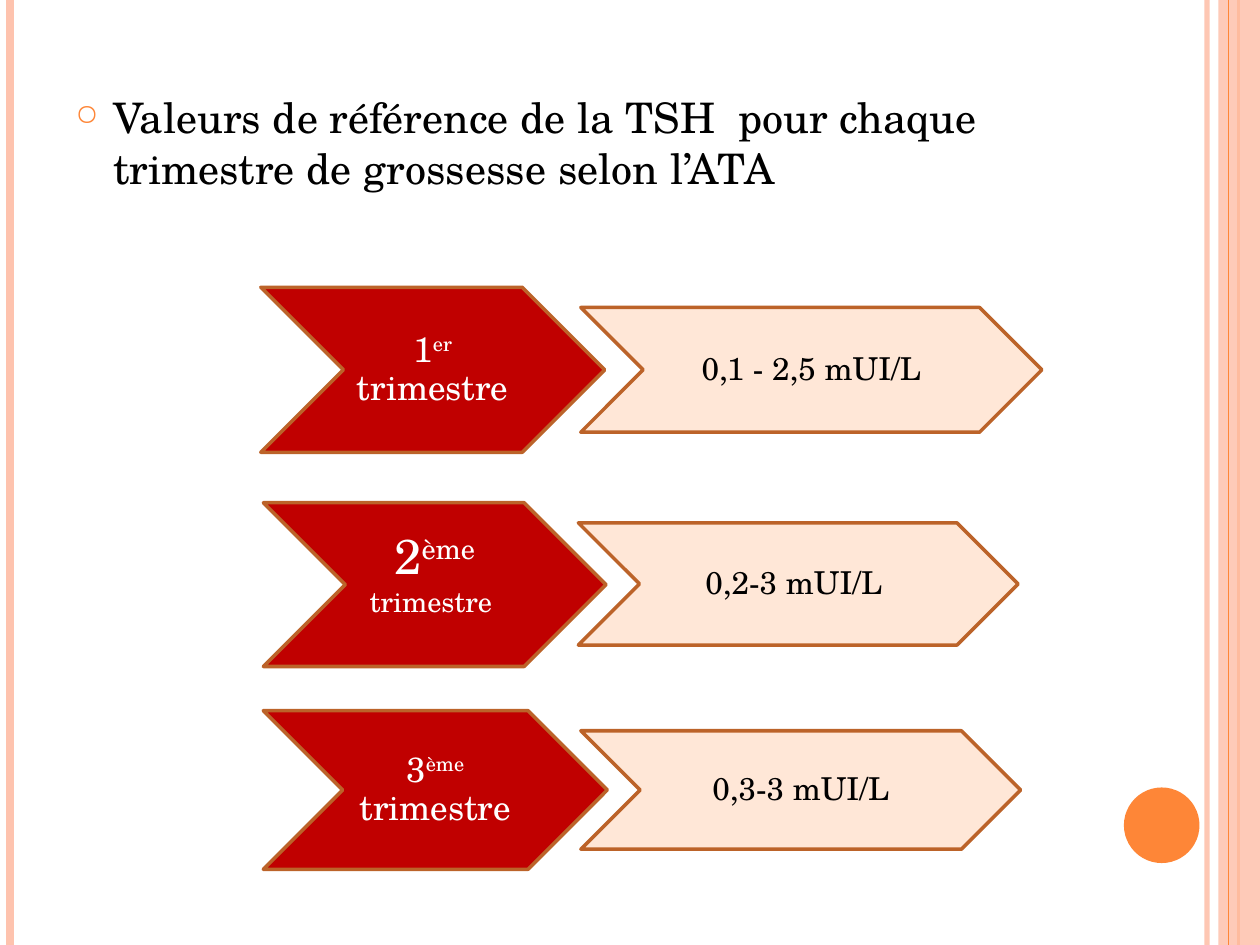
from pptx import Presentation
from pptx.dml.color import RGBColor
from pptx.enum.shapes import MSO_CONNECTOR, MSO_SHAPE
from pptx.enum.text import MSO_ANCHOR, PP_ALIGN
from pptx.oxml.ns import qn
from pptx.util import Inches, Pt
from lxml import etree

STRAIGHT = MSO_CONNECTOR.STRAIGHT
RECTANGLE, OVAL, CHEVRON = MSO_SHAPE.RECTANGLE, MSO_SHAPE.OVAL, MSO_SHAPE.CHEVRON
CENTER, MIDDLE = PP_ALIGN.CENTER, MSO_ANCHOR.MIDDLE

PINK = RGBColor(0xFE, 0xC3, 0xAE)
ORANGE = RGBColor(0xFE, 0x86, 0x37)
BROWN = RGBColor(0xBC, 0x63, 0x29)
RED = RGBColor(0xC0, 0x00, 0x00)
CREAM = RGBColor(0xFF, 0xE7, 0xD7)
WHITE = RGBColor(0xFF, 0xFF, 0xFF)
BLACK = RGBColor(0x00, 0x00, 0x00)

COLUMNS, ROWS = 100, 75


class SlideBuilder:
    """Draws on one slide, with lengths in columns and rows of the grid."""

    font_name = "TeX Gyre Schola"

    def __init__(self, presentation):
        self.slide = presentation.slides.add_slide(presentation.slide_layouts[6])
        self.column = presentation.slide_width / COLUMNS
        self.row = presentation.slide_height / ROWS

    def place(self, left, top, width, height):
        return (round(left * self.column), round(top * self.row),
                round(width * self.column), round(height * self.row))

    def set_alpha(self, element, percent):
        color = next(element.iter(qn("a:srgbClr")))
        etree.SubElement(color, qn("a:alpha")).set("val", str(percent * 1000))

    def vertical_line(self, column, color, width, alpha=100):
        x, top, _, bottom = self.place(column, 0, 0, ROWS)
        line = self.slide.shapes.add_connector(STRAIGHT, x, top, x, bottom)
        line.line.color.rgb = color
        line.line.width = Pt(width)
        properties = line._element.spPr
        if alpha < 100:
            self.set_alpha(properties, alpha)
        etree.SubElement(properties, qn("a:effectLst"))

    def shape(self, kind, box, fill, outline=None, alpha=100):
        shape = self.slide.shapes.add_shape(kind, *self.place(*box))
        shape.shadow.inherit = False
        shape.fill.solid()
        shape.fill.fore_color.rgb = fill
        if alpha < 100:
            self.set_alpha(shape._element.spPr, alpha)
        if outline is None:
            shape.line.fill.background()
        else:
            shape.line.color.rgb = outline
            shape.line.width = Pt(2)
        return shape

    def add_run(self, paragraph, text, size, color, superscript=False):
        run = paragraph.add_run()
        run.text = text
        run.font.color.rgb = color
        for name, value in {"name": self.font_name, "size": Pt(size)}.items():
            setattr(run.font, name, value)
        if superscript:
            run.font._element.set("baseline", "30000")

    def chevron(self, box, fill, color, size, parts):
        """Every second text of parts is set as superscript."""
        frame = self.shape(CHEVRON, box, fill, BROWN).text_frame
        margins = dict.fromkeys(
            ("margin_left", "margin_right", "margin_top", "margin_bottom"), Inches(0.02))
        for name, value in {"word_wrap": True, "vertical_anchor": MIDDLE, **margins}.items():
            setattr(frame, name, value)
        paragraph = frame.paragraphs[0]
        paragraph.alignment = CENTER
        paragraph.line_spacing = 0.9
        for index, text in enumerate(parts):
            self.add_run(paragraph, text, size, color, superscript=index % 2 == 1)

    def bullet_text(self, box, text, size):
        frame = self.slide.shapes.add_textbox(*self.place(*box)).text_frame
        frame.word_wrap = True
        paragraph = frame.paragraphs[0]
        paragraph.space_before = Pt(6)
        properties = paragraph._p.get_or_add_pPr()
        indent = Inches(0.3)
        properties.set("marL", str(indent))
        properties.set("indent", str(-indent))
        bullet_color = etree.SubElement(properties, qn("a:buClr"))
        etree.SubElement(bullet_color, qn("a:srgbClr")).set("val", str(ORANGE))
        etree.SubElement(properties, qn("a:buSzPct")).set("val", "70000")
        etree.SubElement(properties, qn("a:buChar")).set("char", "○")
        self.add_run(paragraph, text, size, BLACK)


def main():
    presentation = Presentation()
    presentation.slide_width, presentation.slide_height = Inches(10), Inches(7.5)
    builder = SlideBuilder(presentation)

    builder.vertical_line(95.8, PINK, 3, alpha=93)
    builder.vertical_line(0.8, PINK, 4.5)
    builder.vertical_line(98.3, ORANGE, 1.5)
    builder.shape(RECTANGLE, (96.7, 0, 3.3, ROWS), PINK, alpha=87)
    builder.vertical_line(97.5, ORANGE, 0.75)
    builder.shape(OVAL, (89.2, 62.5, 6, 6), ORANGE)

    builder.bullet_text(
        (5, 6.8, 86.5, 64),
        "Valeurs de référence de la TSH  pour chaque trimestre de grossesse selon l’ATA", 24)

    trimesters = [
        ((20.7, 22.8, 27.3, 13.1), 20, ("1", "er", " trimestre"),
         (46.1, 24.4, 36.6, 9.9), "0,1 - 2,5 mUI/L"),
        ((20.9, 39.9, 27.2, 13), 28, ("2", "ème trimestre "),
         (45.9, 41.5, 34.9, 9.7), "0,2-3 mUI/L "),
        ((20.9, 56.4, 27.3, 12.6), 20, ("3", "ème", " trimestre"),
         (46.1, 58, 34.9, 9.4), "0,3-3 mUI/L"),
    ]
    for label_box, label_size, label, range_box, reference_range in trimesters:
        builder.chevron(label_box, RED, WHITE, label_size, label)
        builder.chevron(range_box, CREAM, BLACK, 18, (reference_range,))

    presentation.save("out.pptx")


if __name__ == "__main__":
    main()
